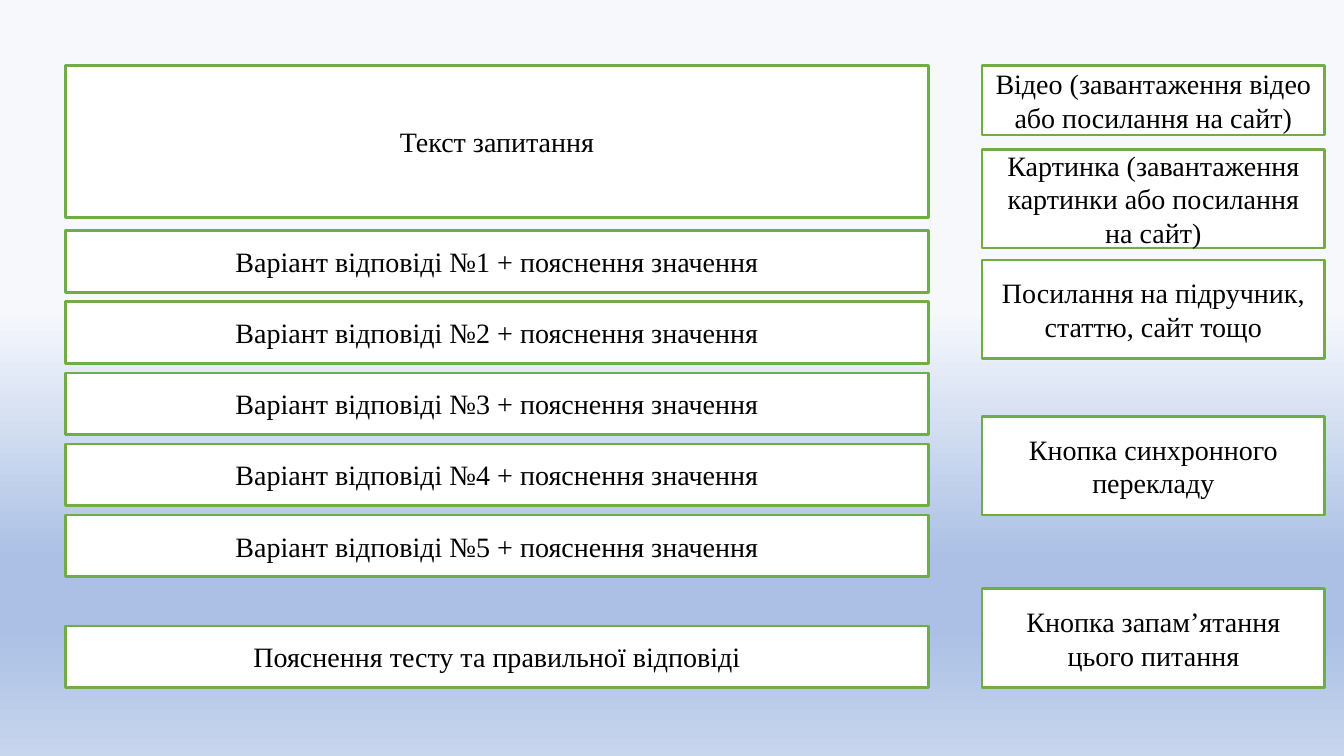
"""Build the slide that lays out a test question editor."""
from typing import NamedTuple

from pptx import Presentation
from pptx.dml.color import RGBColor
from pptx.enum.shapes import MSO_SHAPE
from pptx.enum.text import MSO_ANCHOR, PP_ALIGN
from pptx.oxml import parse_xml
from pptx.oxml.ns import nsdecls
from pptx.slide import Slide
from pptx.text.text import TextFrame
from pptx.util import Inches, Pt

FONT = "Times New Roman"
GREEN, WHITE, BLACK = "70AD47", "FFFFFF", "000000"
GRADIENT = [(41, "F6F8FC"), (74, "ABC0E4"), (83, "ABC0E4"), (100, "C7D5ED")]

MAIN_LEFT, MAIN_WIDTH = 0.65, 8.56
SIDE_LEFT, SIDE_WIDTH = 9.74, 3.4
TOP = 0.65
ROW_HEIGHT, SIDE_HEIGHT = 0.61, 0.98
ANSWER_TOP, ANSWER_PITCH, ANSWER_COUNT = 2.29, 0.705, 5


class Box(NamedTuple):
    """A framed field with its text; lengths are in inches."""

    text: str
    left: float
    top: float
    width: float
    height: float


def main_box(text: str, top: float, height: float = ROW_HEIGHT) -> Box:
    """Describe a field of the wide column."""
    return Box(text, MAIN_LEFT, top, MAIN_WIDTH, height)


def side_box(text: str, top: float, height: float = SIDE_HEIGHT) -> Box:
    """Describe a field of the narrow column."""
    return Box(text, SIDE_LEFT, top, SIDE_WIDTH, height)


BOXES = [
    main_box("Текст запитання", TOP, 1.51),
    *(
        main_box(f"Варіант відповіді №{i + 1} + пояснення значення", ANSWER_TOP + i * ANSWER_PITCH)
        for i in range(ANSWER_COUNT)
    ),
    main_box("Пояснення тесту та правильної відповіді", 6.21),
    side_box("Відео (завантаження відео або посилання на сайт)", TOP, 0.69),
    side_box("Картинка (завантаження картинки або посилання на сайт)", 1.48),
    side_box("Посилання на підручник, статтю, сайт тощо", 2.58),
    side_box("Кнопка синхронного перекладу", 4.13),
    side_box("Кнопка запам’ятання цього питання", 5.84),
]


def rgb(value: str) -> RGBColor:
    """Turn a hex string into a colour."""
    return RGBColor.from_string(value)


def write(tf: TextFrame, text: str, *, size: float = 20, color: str = BLACK) -> None:
    """Write one centred paragraph into a text frame."""
    tf.word_wrap = True
    tf.vertical_anchor = MSO_ANCHOR.MIDDLE
    p = tf.paragraphs[0]
    p.alignment = PP_ALIGN.CENTER
    r = p.add_run()
    r.text = text
    r.font.name = FONT
    r.font.size = Pt(size)
    r.font.color.rgb = rgb(color)


def draw_box(s: Slide, box: Box) -> None:
    """Draw a white field with a green frame."""
    sp = s.shapes.add_shape(
        MSO_SHAPE.RECTANGLE,
        Inches(box.left), Inches(box.top), Inches(box.width), Inches(box.height),
    )
    sp.shadow.inherit = False
    sp.fill.solid()
    sp.fill.fore_color.rgb = rgb(WHITE)
    sp.line.color.rgb = rgb(GREEN)
    sp.line.width = Pt(2)
    write(sp.text_frame, box.text)


def set_background(s: Slide, stops: list[tuple[int, str]]) -> None:
    """Fill the slide background with a top-to-bottom gradient."""
    gs = "".join(
        f'<a:gs pos="{pos * 1000}"><a:srgbClr val="{color}"/></a:gs>' for pos, color in stops
    )
    bg = parse_xml(
        f'<p:bg {nsdecls("p", "a")}><p:bgPr><a:gradFill rotWithShape="1">'
        f'<a:gsLst>{gs}</a:gsLst><a:lin ang="5400000" scaled="0"/>'
        "</a:gradFill><a:effectLst/></p:bgPr></p:bg>"
    )
    s.element.cSld.insert(0, bg)


def main() -> None:
    """Create the presentation and save it."""
    prs = Presentation()
    prs.slide_width, prs.slide_height = Inches(13.33), Inches(7.5)
    s = prs.slides.add_slide(prs.slide_layouts[6])
    set_background(s, GRADIENT)
    for box in BOXES:
        draw_box(s, box)
    prs.save("out.pptx")


if __name__ == "__main__":
    main()
